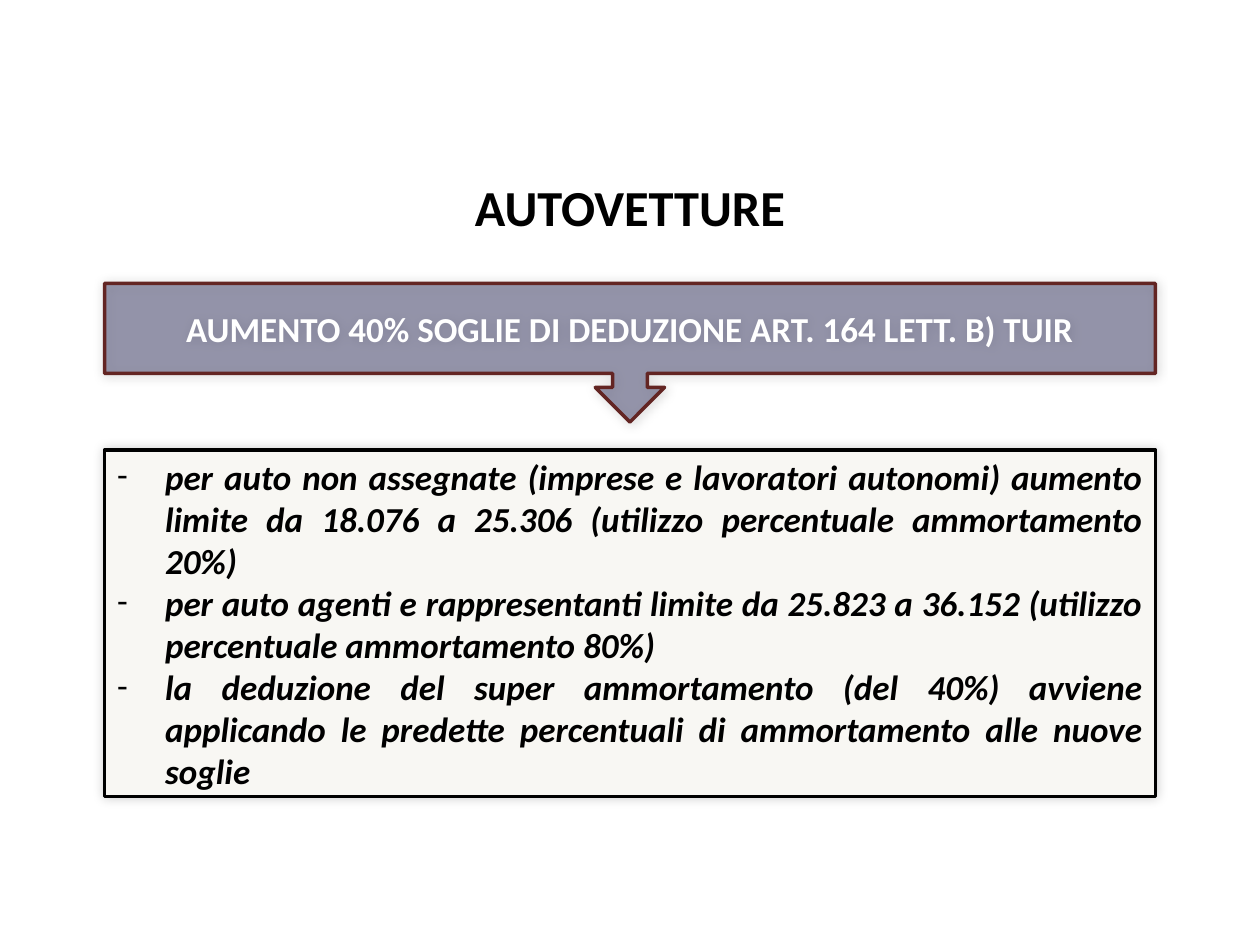
import lxml.etree
import pptx
import pptx.dml.color
import pptx.enum.shapes
import pptx.enum.text
import pptx.oxml.ns
import pptx.util

TITLE = "AUTOVETTURE"
CALLOUT = "AUMENTO 40% SOGLIE DI DEDUZIONE ART. 164 LETT. B) TUIR"
RULES = [
    "per auto non assegnate (imprese e lavoratori autonomi) aumento limite da 18.076 a 25.306 "
    "(utilizzo percentuale ammortamento 20%)",
    "per auto agenti e rappresentanti limite da 25.823 a 36.152 "
    "(utilizzo percentuale ammortamento 80%)",
    "la deduzione del super ammortamento (del 40%) avviene applicando le predette percentuali "
    "di ammortamento alle nuove soglie",
]
ALIGN = pptx.enum.text.PP_ALIGN


def color(hex_string):
    return pptx.dml.color.RGBColor.from_string(hex_string)


def add_xml(parent, tag, **attributes):
    element = lxml.etree.SubElement(parent, pptx.oxml.ns.qn(tag))
    for name, value in attributes.items():
        element.set(name, str(value))
    return element


class SlideBuilder:
    font_name = "Calibri"
    margin = 0.83
    indent = pptx.util.Inches(0.38)

    def __init__(self, presentation):
        self.width = presentation.slide_width
        self.slide = presentation.slides.add_slide(presentation.slide_layouts[1])

    def box(self, top, height, margin=margin):
        """Centred box, measured in tenths of the slide's width."""
        unit = self.width / 10
        lengths = (margin, top, 10 - 2 * margin, height)
        return [round(length * unit) for length in lengths]

    def place(self, shape, box):
        for name, value in zip(("left", "top", "width", "height"), box):
            setattr(shape, name, value)

    def set_text(self, shape, texts, alignment, size, font_color, **font_format):
        frame = shape.text_frame
        frame.text = "\n".join(texts)
        frame_format = {
            "word_wrap": True,
            "auto_size": pptx.enum.text.MSO_AUTO_SIZE.NONE,
            "vertical_anchor": pptx.enum.text.MSO_ANCHOR.MIDDLE,
        }
        for name, value in frame_format.items():
            setattr(frame, name, value)
        font_format = {"name": self.font_name, "size": pptx.util.Pt(size), "bold": True, **font_format}
        for paragraph in frame.paragraphs:
            paragraph.alignment = alignment
            font = paragraph.runs[0].font
            for name, value in font_format.items():
                setattr(font, name, value)
            font.color.rgb = color(font_color)

    def decorate(self, shape, fill, line, opacity=100):
        """Give the shape its fill, outline and soft shadow."""
        shape.fill.solid()
        shape.fill.fore_color.rgb = color(fill)
        shape.line.color.rgb = color(line)
        shape.line.width = pptx.util.Pt(2)
        properties = shape.element.spPr
        if opacity < 100:
            fill_color = properties.find(pptx.oxml.ns.qn("a:solidFill"))[0]
            add_xml(fill_color, "a:alpha", val=opacity * 1000)
        shape.shadow.inherit = False
        effects = properties.find(pptx.oxml.ns.qn("a:effectLst"))
        shadow = add_xml(effects, "a:outerShdw", blurRad=pptx.util.Pt(6), dist=0,
                         dir=225 * 60000, rotWithShape=0)
        shadow_color = add_xml(shadow, "a:srgbClr", val="000000")
        add_xml(shadow_color, "a:alpha", val=20000)

    def title(self, text, top, height):
        shape = self.slide.shapes.title
        self.place(shape, self.box(top, height, margin=0))
        self.set_text(shape, [text], ALIGN.CENTER, 28.8, "000000")

    def callout(self, text, top, height):
        kind = pptx.enum.shapes.MSO_SHAPE.DOWN_ARROW_CALLOUT
        shape = self.slide.shapes.add_shape(kind, *self.box(top, height))
        self.decorate(shape, "19194D", "632523", opacity=41)
        self.set_text(shape, [text], ALIGN.CENTER, 20, "FFFFFF")

    def dash_list(self, texts, top, height):
        shape = self.slide.placeholders[1]
        self.place(shape, self.box(top, height))
        self.decorate(shape, "F8F7F3", "000000")
        self.set_text(shape, texts, ALIGN.JUSTIFY, 20, "000000", italic=True)
        for paragraph in shape.text_frame.paragraphs:
            properties = paragraph._p.get_or_add_pPr()
            properties.set("marL", str(self.indent))
            properties.set("indent", str(-self.indent))
            add_xml(properties, "a:buFont", typeface=self.font_name)
            add_xml(properties, "a:buChar", char="-")
            paragraph.space_before = pptx.util.Pt(0)


def main():
    presentation = pptx.Presentation()
    presentation.slide_width = pptx.util.Inches(10)
    presentation.slide_height = pptx.util.Inches(7.5)
    builder = SlideBuilder(presentation)
    builder.title(TITLE, top=1.34, height=0.6)
    builder.callout(CALLOUT, top=2.25, height=1.1)
    builder.dash_list(RULES, top=3.57, height=2.75)
    presentation.save("out.pptx")


if __name__ == "__main__":
    main()
